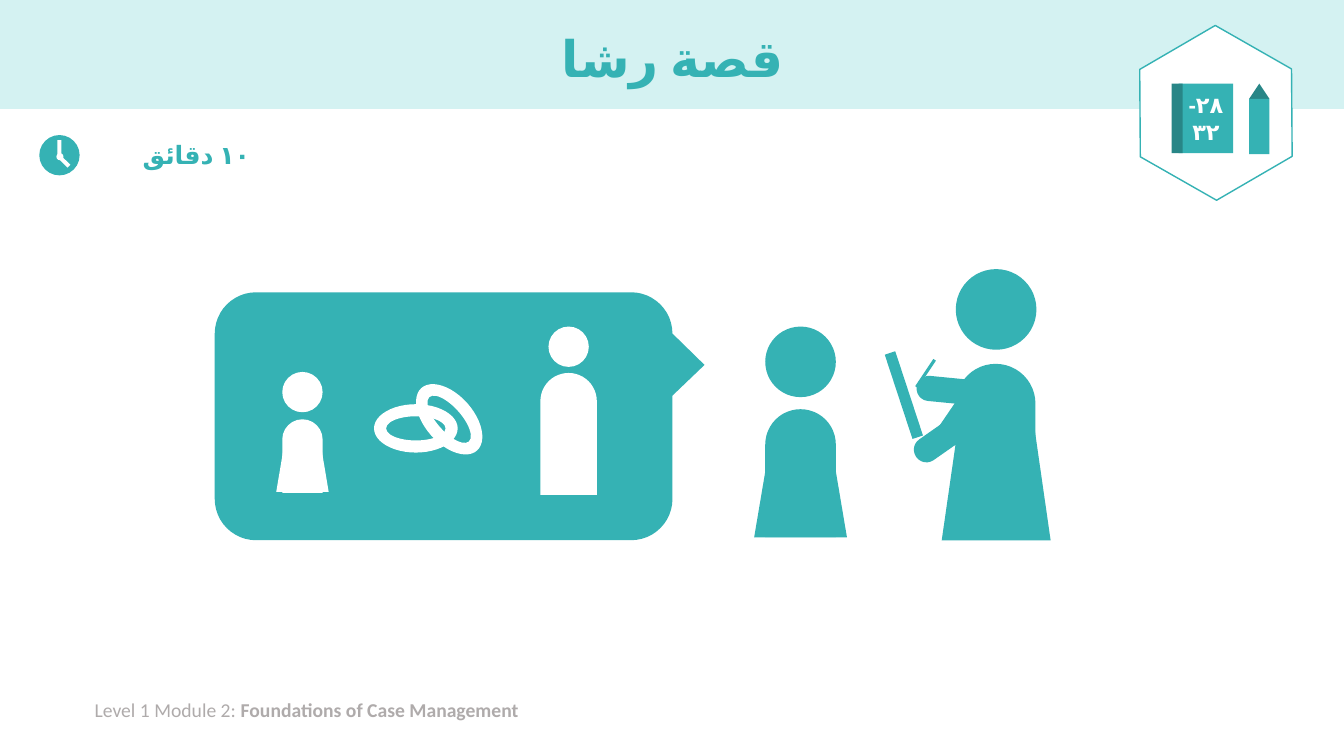
from dataclasses import dataclass

from lxml.etree import SubElement
from pptx import Presentation
from pptx.dml.color import RGBColor
from pptx.enum.shapes import MSO_CONNECTOR, MSO_SHAPE
from pptx.enum.text import MSO_ANCHOR, MSO_AUTO_SIZE, PP_ALIGN
from pptx.oxml.ns import qn
from pptx.util import Emu, Pt

EMU_PER_PX = 9144
COLORS = {"teal": "35B2B4", "dark": "288687", "pale": "D4F2F2",
          "white": "FFFFFF", "gray": "AFABAB"}
ROUND_TOP = MSO_SHAPE.ROUND_2_SAME_RECTANGLE
SKIRT = MSO_SHAPE.FLOWCHART_MANUAL_OPERATION
DOME = (0.5, 0)
ARM_END = (0.49, 0)


@dataclass(frozen=True)
class Piece:
    kind: MSO_SHAPE
    left: int
    top: int
    width: int
    height: int
    color: str = "teal"
    turn: float = 0
    adjust: tuple[float, ...] = ()


def px(length: int) -> Emu:
    return Emu(length * EMU_PER_PX)


def rgb(name: str) -> RGBColor:
    return RGBColor.from_string(COLORS[name])


def draw(slide, piece: Piece):
    shape = slide.shapes.add_shape(
        piece.kind, *map(px, (piece.left, piece.top, piece.width, piece.height)))
    shape.shadow.inherit = False
    shape.fill.solid()
    shape.fill.fore_color.rgb = rgb(piece.color)
    shape.line.fill.background()
    shape.rotation = piece.turn
    for index, value in enumerate(piece.adjust):
        shape.adjustments[index] = value
    return shape


def format_runs(paragraph, size: int, color: str, font: str = "Calibri",
                bold: bool = True) -> None:
    for run in paragraph.runs:
        run.font.name = font
        run.font.size = Pt(size)
        run.font.bold = bold
        run.font.color.rgb = rgb(color)


def write_arabic(frame, text: str, size: int, color: str, align: PP_ALIGN,
                 font: str = "Calibri") -> None:
    frame.text = text
    paragraph = frame.paragraphs[0]
    paragraph.alignment = align
    paragraph._p.get_or_add_pPr().set("rtl", "1")
    format_runs(paragraph, size, color, font)
    for run in paragraph.runs:
        run._r.get_or_add_rPr().set("lang", "ar-SA")
        SubElement(run._r.rPr, qn("a:cs"), typeface=font)


def add_text_box(slide, left: int, top: int, width: int, height: int):
    frame = slide.shapes.add_textbox(*map(px, (left, top, width, height))).text_frame
    frame.word_wrap = True
    return frame


def girl(left: int, top: int, head: int, color: str) -> list[Piece]:
    def scaled(ratio: float) -> int:
        return round(head * ratio)

    return [
        Piece(ROUND_TOP, left, top + scaled(1.17), head, scaled(1.82), color, adjust=DOME),
        Piece(MSO_SHAPE.OVAL, left, top, head, head, color),
        Piece(SKIRT, left - scaled(0.16), top + scaled(1.43), scaled(1.31), scaled(1.56),
              color, 180),
    ]


BANNER = Piece(MSO_SHAPE.RECTANGLE, 0, 0, 1333, 108, "pale")
BADGE = Piece(MSO_SHAPE.HEXAGON, 1119, 37, 174, 150, "white", 29.7, (0.29, 1.155))
BOOK = Piece(MSO_SHAPE.RECTANGLE, 1169, 83, 54, 69)
SPINE_AND_PENCIL = [
    Piece(MSO_SHAPE.RECTANGLE, 1162, 83, 11, 69, "dark"),
    Piece(MSO_SHAPE.ISOSCELES_TRIANGLE, 1239, 83, 20, 15, "dark"),
    Piece(MSO_SHAPE.RECTANGLE, 1239, 98, 20, 55),
]
CLOCK = [
    Piece(MSO_SHAPE.OVAL, 39, 134, 40, 40),
    Piece(MSO_SHAPE.OVAL, 56, 152, 7, 7, "white"),
    Piece(MSO_SHAPE.RECTANGLE, 51, 145, 16, 4, "white", 270),
    Piece(MSO_SHAPE.RECTANGLE, 59, 159, 11, 4, "white", 224.2),
]
SPEECH = Piece(MSO_SHAPE.ROUNDED_RECTANGULAR_CALLOUT, 213, 290, 454, 246,
               adjust=(0.57, -0.207, 0.167))
GROOM = [
    Piece(ROUND_TOP, 536, 370, 56, 121, "white", adjust=DOME),
    Piece(MSO_SHAPE.OVAL, 544, 324, 40, 40, "white"),
]
RINGS = [
    Piece(MSO_SHAPE.DONUT, 371, 401, 83, 48, "white"),
    Piece(MSO_SHAPE.DONUT, 404, 392, 83, 48, "white", 48.4),
]
ARMS_AND_CLIPBOARD = [
    Piece(ROUND_TOP, 939, 385, 25, 61, turn=214.3, adjust=ARM_END),
    Piece(ROUND_TOP, 913, 421, 25, 41, turn=235, adjust=ARM_END),
    Piece(MSO_SHAPE.RECTANGLE, 891, 348, 11, 88, turn=341.8),
    Piece(ROUND_TOP, 931, 353, 25, 69, turn=275.6, adjust=ARM_END),
]
CASEWORKER = [
    Piece(SKIRT, 934, 386, 108, 150, turn=180),
    Piece(ROUND_TOP, 948, 361, 79, 174, adjust=DOME),
    Piece(MSO_SHAPE.OVAL, 948, 267, 80, 80),
]


def add_title(slide) -> None:
    title = slide.shapes.title
    title.left, title.top, title.width, title.height = map(px, (92, 13, 1150, 95))
    frame = title.text_frame
    frame.auto_size = MSO_AUTO_SIZE.NONE
    frame.vertical_anchor = MSO_ANCHOR.MIDDLE
    write_arabic(frame, "قصة رشا", 36, "teal", PP_ALIGN.CENTER)
    frame.paragraphs[0].line_spacing = 0.9
    title.element.addprevious(draw(slide, BANNER).element)


def add_footer(slide) -> None:
    paragraph = add_text_box(slide, 84, 687, 455, 34).paragraphs[0]
    for text, bold in (("Level 1 Module 2: ", False),
                       ("Foundations of Case Management", True)):
        paragraph.add_run().text = text
    format_runs(paragraph, 14, "gray", bold=False)
    paragraph.runs[-1].font.bold = bold


def add_badge(slide) -> None:
    hexagon = draw(slide, BADGE)
    hexagon.line.color.rgb = rgb("teal")
    hexagon.line.width = Pt(1)
    pages = draw(slide, BOOK).text_frame
    pages.word_wrap = True
    pages.vertical_anchor = MSO_ANCHOR.MIDDLE
    pages.margin_left = pages.margin_right = 0
    write_arabic(pages, "٢٨-٣٢", 16, "white", PP_ALIGN.CENTER, "Arial")
    for piece in SPINE_AND_PENCIL:
        draw(slide, piece)


def add_pen(slide) -> None:
    pen = slide.shapes.add_connector(MSO_CONNECTOR.STRAIGHT,
                                     *map(px, (927, 357, 909, 384)))
    pen.line.color.rgb = rgb("teal")
    pen.line.width = Pt(2.25)
    SubElement(pen.element.spPr, qn("a:effectLst"))


def main() -> None:
    deck = Presentation()
    deck.slide_width, deck.slide_height = px(1333), px(750)
    slide = deck.slides.add_slide(deck.slide_layouts[5])
    add_title(slide)
    add_footer(slide)
    add_badge(slide)
    duration = add_text_box(slide, 87, 133, 171, 40)
    write_arabic(duration, "١٠ دقائق", 18, "teal", PP_ALIGN.RIGHT)
    rasha = girl(759, 324, 70, "teal")
    bride = girl(280, 369, 40, "white")
    for piece in [*CLOCK, SPEECH, *rasha, *bride, *GROOM, *RINGS, *ARMS_AND_CLIPBOARD]:
        draw(slide, piece)
    add_pen(slide)
    for piece in CASEWORKER:
        draw(slide, piece)
    deck.save("out.pptx")


if __name__ == "__main__":
    main()
